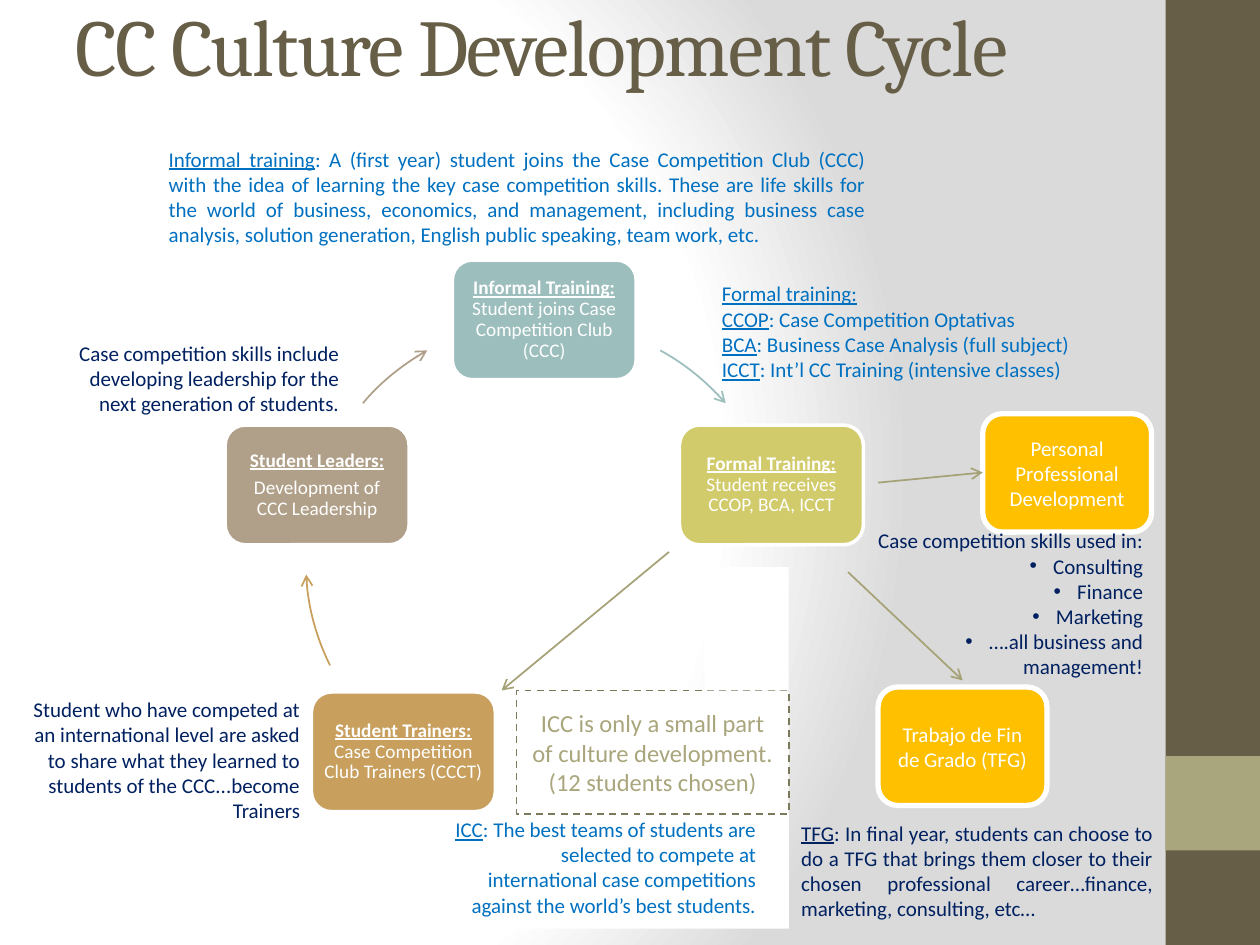
from typing import NamedTuple

from lxml import etree
from pptx import Presentation
from pptx.dml.color import RGBColor
from pptx.enum.dml import MSO_LINE
from pptx.enum.shapes import MSO_CONNECTOR, MSO_SHAPE
from pptx.enum.text import MSO_ANCHOR, MSO_AUTO_SIZE, PP_ALIGN
from pptx.oxml import parse_xml
from pptx.oxml.ns import nsdecls, qn
from pptx.util import Pt

LEFT, CENTER, RIGHT, JUSTIFY = PP_ALIGN.LEFT, PP_ALIGN.CENTER, PP_ALIGN.RIGHT, PP_ALIGN.JUSTIFY
TOP, MIDDLE = MSO_ANCHOR.TOP, MSO_ANCHOR.MIDDLE
RECTANGLE, ROUNDED = MSO_SHAPE.RECTANGLE, MSO_SHAPE.ROUNDED_RECTANGLE
STRAIGHT, DASH = MSO_CONNECTOR.STRAIGHT, MSO_LINE.DASH
FIT_TEXT, NO_FIT = MSO_AUTO_SIZE.SHAPE_TO_FIT_TEXT, MSO_AUTO_SIZE.NONE

COLORS = {
    "white": "FFFFFF", "mist": "DADADA", "brown": "675E47", "olive": "A9A57C",
    "dark olive": "7D7A5C", "arrow": "A6A278", "teal": "9CBEBD", "lime": "D2CB6C",
    "ochre": "C89F5D", "taupe": "B1A089", "amber": "FFC000", "blue": "0070C0",
    "navy": "002060",
}
CARD_SIZE = (105.1, 68.4)
OUTCOME_SIZE = (96.5, 67.7)
ARC_STEPS = 12


class Span(NamedTuple):
    text: str
    underline: bool = False
    bold: bool = False


class Card(NamedTuple):
    left: float
    top: float
    color: str
    paragraphs: list[list[Span]]


class Note(NamedTuple):
    area: tuple[float, float, float, float]
    color: str
    align: PP_ALIGN
    paragraphs: list[list[Span]]
    first_bullet: int | None = None


class Arc(NamedTuple):
    color: str
    points: list[tuple[float, float]]


def heading(text: str) -> Span:
    return Span(text, underline=True, bold=True)


def term(text: str) -> Span:
    return Span(text, underline=True)


CARDS = [
    Card(258.5, 148.6, "teal", [[heading("Informal Training: "),
                                 Span("Student joins Case Competition Club (CCC)")]]),
    Card(388.3, 242.9, "lime", [[heading("Formal Training: "),
                                 Span("Student receives CCOP, BCA, ICCT")]]),
    Card(178, 395.4, "ochre", [[heading("Student Trainers: "),
                                Span("Case Competition Club Trainers (CCCT)")]]),
    Card(128.7, 242.9, "taupe", [[heading("Student Leaders:")],
                                 [Span("Development of CCC Leadership")]]),
]
OUTCOMES = [
    Card(501.8, 392.6, "amber", [[Span("Trabajo de Fin de Grado (TFG)")]]),
    Card(561.6, 236.4, "amber", [[Span("Personal Professional Development")]]),
]
ARCS = [
    Arc("teal", [(377.3, 200.2), (391.7, 208.1), (403.9, 218.2), (414.7, 230.4)]),
    Arc("ochre", [(188.6, 380.2), (180.7, 364.3), (175.7, 346.3), (175, 328.3)]),
    Arc("taupe", [(207.4, 230.4), (217.4, 218.2), (230.4, 208.1), (244.1, 200.2)]),
]
ARROWS = [
    ((382.3, 315.4), (286.6, 394.6)),
    ((484.6, 326.9), (550.1, 388.8)),
    ((501.8, 275.8), (561.6, 270)),
]
NOTES = [
    Note((405.4, 157, 226.8, 65.5), "blue", LEFT, [
        [term("Formal training:")],
        [term("CCOP"), Span(": Case Competition Optativas")],
        [term("BCA"), Span(": Business Case Analysis (full subject)")],
        [term("ICCT"), Span(": Int’l CC Training (intensive classes)")]]),
    Note((252, 463, 187.2, 65.5), "blue", RIGHT, [
        [term("ICC"), Span(": The best teams of students are selected to compete at international "
                           "case competitions against the world’s best students.")]]),
    Note((0, 394.6, 178.6, 79.9), "navy", RIGHT, [
        [Span("Student who have competed at an international level are asked to share what they "
              "learned to students of the CCC...become Trainers")]]),
    Note((89.3, 79.9, 412.6, 65.5), "blue", JUSTIFY, [
        [term("Informal training"),
         Span(": A (first year) student joins the Case Competition Club (CCC) with the idea of "
              "learning the key case competition skills. These are life skills for the world of "
              "business, economics, and management, including business case analysis, solution "
              "generation, English public speaking, team work, etc.")]]),
    Note((22.3, 190.8, 178.6, 51.1), "navy", RIGHT, [
        [Span("Case competition skills include developing leadership for the next generation of "
              "students.")]]),
    Note((484.6, 298.1, 175.7, 94.3), "navy", RIGHT, [
        [Span("Case competition skills used in:")], [Span("Consulting")], [Span("Finance")],
        [Span("Marketing")], [Span("….all business and management!")]], first_bullet=1),
    Note((450.7, 465.1, 215.3, 65.5), "navy", JUSTIFY, [
        [term("TFG"), Span(": In final year, students can choose to do a TFG that brings them "
                           "closer to their chosen professional career…finance, marketing, "
                           "consulting, etc…")]]),
]


def rgb(name: str) -> RGBColor:
    return RGBColor.from_string(COLORS[name])


def write(frame, paragraphs, size, color, align, anchor=MIDDLE, font="Calibri"):
    frame.word_wrap, frame.vertical_anchor = True, anchor
    for index, spans in enumerate(paragraphs):
        para = frame.add_paragraph() if index else frame.paragraphs[0]
        para.alignment = align
        for span in spans:
            run = para.add_run()
            run.text = span.text
            run.font.name, run.font.size = font, Pt(size)
            run.font.bold, run.font.underline = span.bold, span.underline
            run.font.color.rgb = rgb(color)


def add_box(slide, kind, area, fill, line=None, width=1.0):
    box = slide.shapes.add_shape(kind, *map(Pt, area))
    box.shadow.inherit = False
    box.fill.solid()
    box.fill.fore_color.rgb = rgb(fill)
    if line:
        box.line.color.rgb, box.line.width = rgb(line), Pt(width)
    else:
        box.line.fill.background()
    return box


def add_card(slide, card: Card) -> None:
    box = add_box(slide, ROUNDED, (card.left, card.top, *CARD_SIZE), card.color, "white", 2)
    frame = box.text_frame
    frame.margin_left = frame.margin_right = frame.margin_top = frame.margin_bottom = Pt(3.6)
    write(frame, card.paragraphs, 11, "white", CENTER)
    for para in frame.paragraphs:
        para.line_spacing, para.space_after = 0.9, Pt(3.85)


def add_note(slide, note: Note) -> None:
    frame = slide.shapes.add_textbox(*map(Pt, note.area)).text_frame
    write(frame, note.paragraphs, 12, note.color, note.align, TOP)
    frame.auto_size = FIT_TEXT
    if note.first_bullet is not None:
        for para in frame.paragraphs[note.first_bullet:]:
            properties = para._p.get_or_add_pPr()
            properties.set("marL", str(Pt(13.5)))
            properties.set("indent", str(-Pt(13.5)))
            etree.SubElement(properties, qn("a:buFont"), typeface="Arial")
            etree.SubElement(properties, qn("a:buChar"), char="•")


def style_arrow(shape, color: str) -> None:
    shape.line.color.rgb, shape.line.width = rgb(color), Pt(1)
    properties = shape._element.spPr
    etree.SubElement(properties.find(qn("a:ln")), qn("a:tailEnd"), type="arrow")
    etree.SubElement(properties, qn("a:effectLst"))


def add_arc(slide, arc: Arc) -> None:
    """Trace a cubic Bezier curve as an open outline."""
    def point(t):
        weights = ((1 - t) ** 3, 3 * t * (1 - t) ** 2, 3 * t * t * (1 - t), t ** 3)
        return tuple(Pt(sum(w * p[axis] for w, p in zip(weights, arc.points))) for axis in (0, 1))

    start, *rest = [point(step / ARC_STEPS) for step in range(ARC_STEPS + 1)]
    builder = slide.shapes.build_freeform(*start)
    builder.add_line_segments(rest, close=False)
    curve = builder.convert_to_shape()
    curve.fill.background()
    style_arrow(curve, arc.color)


def set_background(slide) -> None:
    stops = "".join(f'<a:gs pos="{position}"><a:srgbClr val="{COLORS[name]}"/></a:gs>'
                    for position, name in ((0, "white"), (75000, "white"), (100000, "mist")))
    slide.background.fill.solid()
    solid = slide._element.cSld.find(".//" + qn("a:solidFill"))
    solid.getparent().replace(solid, parse_xml(
        f'<a:gradFill rotWithShape="1" {nsdecls("a")}><a:gsLst>{stops}</a:gsLst>'
        '<a:path path="circle"><a:fillToRect l="20000" t="50000" r="100000" b="50000"/></a:path>'
        '</a:gradFill>'))


def main() -> None:
    deck = Presentation()
    deck.slide_width, deck.slide_height = Pt(720), Pt(540)
    slide = deck.slides.add_slide(deck.slide_layouts[5])
    set_background(slide)
    add_box(slide, RECTANGLE, (666, 0, 54, 540), "brown")
    add_box(slide, RECTANGLE, (666, 432, 54, 54), "olive")

    title = slide.shapes.title
    title.left, title.top, title.width, title.height = map(Pt, (36, -19.4, 613.4, 90))
    write(title.text_frame, [[Span("CC Culture Development Cycle")]], 46, "brown", LEFT,
          font="Cambria")
    title.text_frame.auto_size = NO_FIT
    title.text_frame.paragraphs[0].runs[0].font._element.set("spc", "-100")

    for card in CARDS:
        add_card(slide, card)
    for arc in ARCS:
        add_arc(slide, arc)
    add_box(slide, RECTANGLE, (257.8, 465.1, 193, 65.5), "white")
    remark = add_box(slide, RECTANGLE, (295.2, 394.6, 155.5, 70.5), "white", "dark olive")
    remark.line.dash_style = DASH
    write(remark.text_frame, [[Span("ICC is only a small part of culture development. "
                                    "(12 students chosen)")]], 14, "olive", CENTER)
    add_box(slide, RECTANGLE, (402.5, 324, 48.2, 70.5), "white")
    for outcome in OUTCOMES:
        box = add_box(slide, ROUNDED, (outcome.left, outcome.top, *OUTCOME_SIZE),
                      outcome.color, "white", 3)
        write(box.text_frame, outcome.paragraphs, 12, "white", CENTER)
    for start, end in ARROWS:
        style_arrow(slide.shapes.add_connector(STRAIGHT, *map(Pt, start + end)), "arrow")
    for note in NOTES:
        add_note(slide, note)
    deck.save("out.pptx")


if __name__ == "__main__":
    main()
